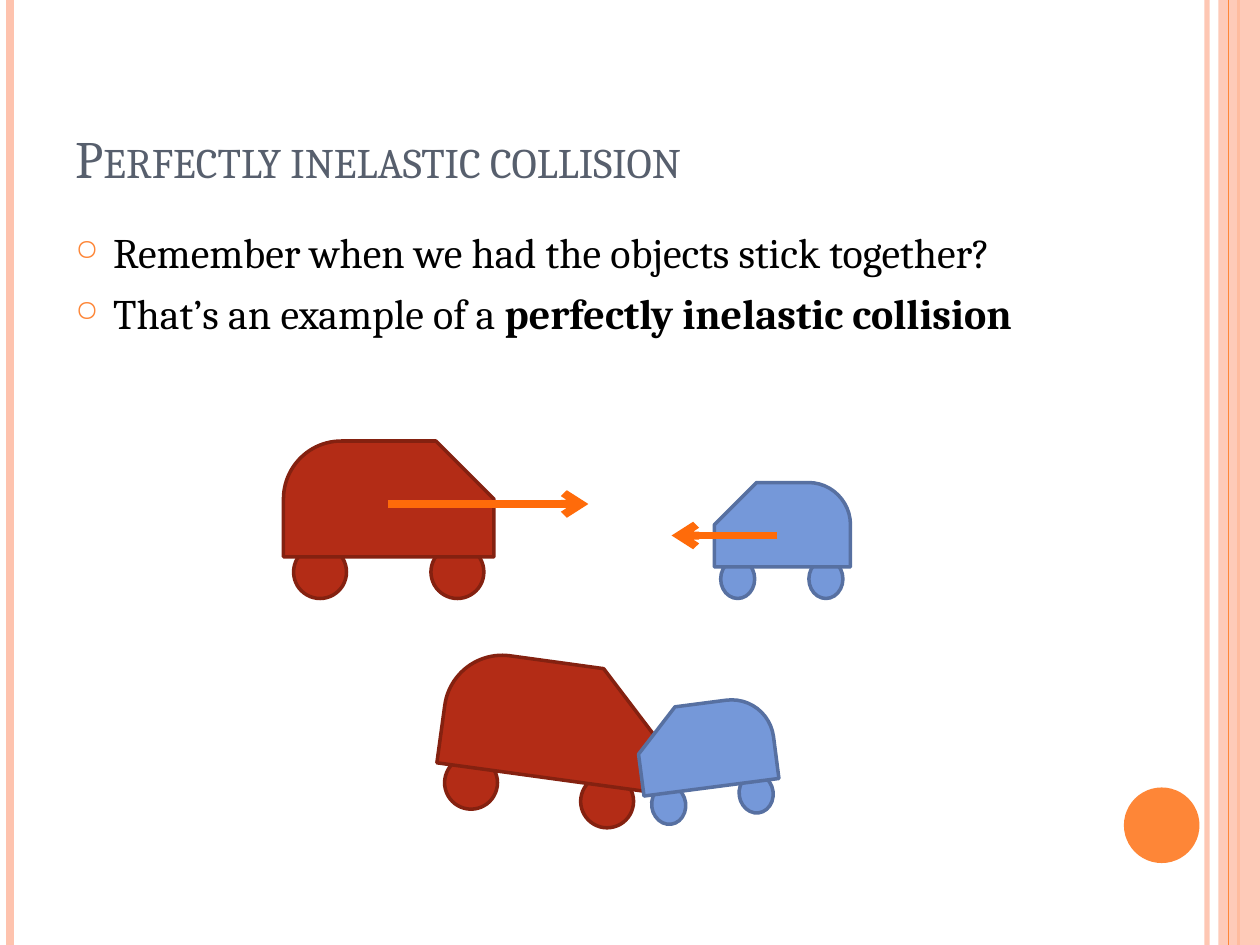
from dataclasses import dataclass

from lxml import etree
from pptx import Presentation
from pptx.dml.color import RGBColor
from pptx.enum.shapes import MSO_CONNECTOR, MSO_SHAPE
from pptx.enum.text import MSO_ANCHOR
from pptx.oxml.ns import qn
from pptx.util import Inches, Pt

LINE = MSO_CONNECTOR.STRAIGHT
RECT = MSO_SHAPE.RECTANGLE
OVAL = MSO_SHAPE.OVAL
BODY = MSO_SHAPE.SNIP_ROUND_RECTANGLE
BOTTOM = MSO_ANCHOR.BOTTOM
TOP = MSO_ANCHOR.TOP

FONT = "Cambria"
PEACH = "FEC3AE"
ORANGE = "FE8637"
ARROW = "FF6B0A"
SLATE = "575F6D"
BLACK = "000000"


@dataclass
class Model:
    width: float
    height: float
    wheel: tuple[float, float]
    spots: tuple[float, float]
    drop: float
    fill: str
    edge: str
    flip: bool


@dataclass
class Car:
    model: Model
    left: float
    top: float
    turn: float = 0


@dataclass
class Stroke:
    start: tuple[float, float]
    end: tuple[float, float]
    color: str
    width: float
    alpha: int = 100
    arrow: bool = False


def rule(x: float, color: str, width: float, alpha: int = 100) -> Stroke:
    return Stroke((x, 0), (x, 7.5), color, width, alpha)


RED = Model(1.67, 0.92, (0.42, 0.42), (0.08, 1.17), 0.83, "B32C16", "842110", False)
BLUE = Model(1.08, 0.67, (0.27, 0.31), (0.75, 0.05), 0.61, "7598D9", "5770A1", True)

BEFORE = [Car(RED, 2.25, 3.5), Car(BLUE, 5.67, 3.83)]
AFTER = [Car(RED, 3.5, 5.25, 7.8), Car(BLUE, 5.08, 5.58, -7.4)]
BACK = [rule(9.58, PEACH, 3, 93), rule(0.08, PEACH, 4.5), rule(9.83, ORANGE, 1.5)]
FRONT = [rule(9.75, ORANGE, 0.75)]
SPEEDS = [
    Stroke((3.08, 4), (4.67, 4), ARROW, 4.5, arrow=True),
    Stroke((6.17, 4.25), (5.33, 4.25), ARROW, 4.5, arrow=True),
]
TITLE = "Perfectly inelastic collision"
POINTS = [
    [("Remember when we had the objects stick together?", False)],
    [("That’s an example of a ", False), ("perfectly inelastic collision", True)],
]


def paint(target, color: str) -> None:
    target.rgb = RGBColor.from_string(color)


def fade(shape, alpha: int) -> None:
    if alpha < 100:
        color = next(shape.element.spPr.iter(qn("a:srgbClr")))
        etree.SubElement(color, qn("a:alpha"), val=str(alpha * 1000))


def draw_line(shapes, item: Stroke) -> None:
    ends = [Inches(n) for n in item.start + item.end]
    line = shapes.add_connector(LINE, *ends)
    line.line.width = Pt(item.width)
    line.line.fill.solid()
    paint(line.line.color, item.color)
    fade(line, item.alpha)
    if item.arrow:
        etree.SubElement(line.line._get_or_add_ln(), qn("a:tailEnd"), type="arrow")
    etree.SubElement(line.element.spPr, qn("a:effectLst"))


def draw_shape(shapes, kind, box: tuple, fill: str, edge: str = ""):
    shape = shapes.add_shape(kind, *[Inches(n) for n in box])
    shape.shadow.inherit = False
    shape.fill.solid()
    paint(shape.fill.fore_color, fill)
    if edge:
        shape.line.width = Pt(2)
        paint(shape.line.color, edge)
    else:
        shape.line.fill.background()
    return shape


def draw_car(shapes, car: Car) -> None:
    kind = car.model
    group = shapes.add_group_shape()
    for spot in kind.spots:
        box = (car.left + spot, car.top + kind.drop, *kind.wheel)
        draw_shape(group.shapes, OVAL, box, kind.fill, kind.edge)
    box = (car.left, car.top, kind.width, kind.height)
    body = draw_shape(group.shapes, BODY, box, kind.fill, kind.edge)
    body.adjustments[0] = body.adjustments[1] = 0.5
    if kind.flip:
        body.element.spPr.find(qn("a:xfrm")).set("flipH", "1")
    group.rotation = car.turn


def add_frame(shapes, box: tuple, anchor):
    frame = shapes.add_textbox(*[Inches(n) for n in box]).text_frame
    frame.word_wrap = True
    frame.vertical_anchor = anchor
    return frame


def style(run, size: int, color: str, bold: bool = False) -> None:
    run.font.name = FONT
    run.font.size = Pt(size)
    run.font.bold = bold
    paint(run.font.color, color)


def add_bullet(para) -> None:
    para.space_before = Pt(6)
    props = para._p.get_or_add_pPr()
    props.set("marL", str(Inches(0.3)))
    props.set("indent", str(-Inches(0.3)))
    color = etree.SubElement(props, qn("a:buClr"))
    etree.SubElement(color, qn("a:srgbClr"), val=ORANGE)
    etree.SubElement(props, qn("a:buSzPct"), val="70000")
    etree.SubElement(props, qn("a:buChar"), char="○")


def add_text(shapes) -> None:
    frame = add_frame(shapes, (0.5, 0.3, 8.17, 1.25), BOTTOM)
    frame.text = TITLE
    run = frame.paragraphs[0].runs[0]
    style(run, 30, SLATE)
    run.font._element.set("cap", "small")

    frame = add_frame(shapes, (0.5, 1.75, 8.67, 5.33), TOP)
    for i, point in enumerate(POINTS):
        para = frame.add_paragraph() if i else frame.paragraphs[0]
        add_bullet(para)
        for words, bold in point:
            run = para.add_run()
            run.text = words
            style(run, 24, BLACK, bold)


def main() -> None:
    deck = Presentation()
    deck.slide_width = Inches(10)
    deck.slide_height = Inches(7.5)
    shapes = deck.slides.add_slide(deck.slide_layouts[6]).shapes
    for item in BACK:
        draw_line(shapes, item)
    fade(draw_shape(shapes, RECT, (9.67, 0, 0.33, 7.5), PEACH), 87)
    for item in FRONT:
        draw_line(shapes, item)
    draw_shape(shapes, OVAL, (8.92, 6.25, 0.6, 0.6), ORANGE)
    add_text(shapes)
    for car in BEFORE:
        draw_car(shapes, car)
    for item in SPEEDS:
        draw_line(shapes, item)
    for car in AFTER:
        draw_car(shapes, car)
    deck.save("out.pptx")


if __name__ == "__main__":
    main()
